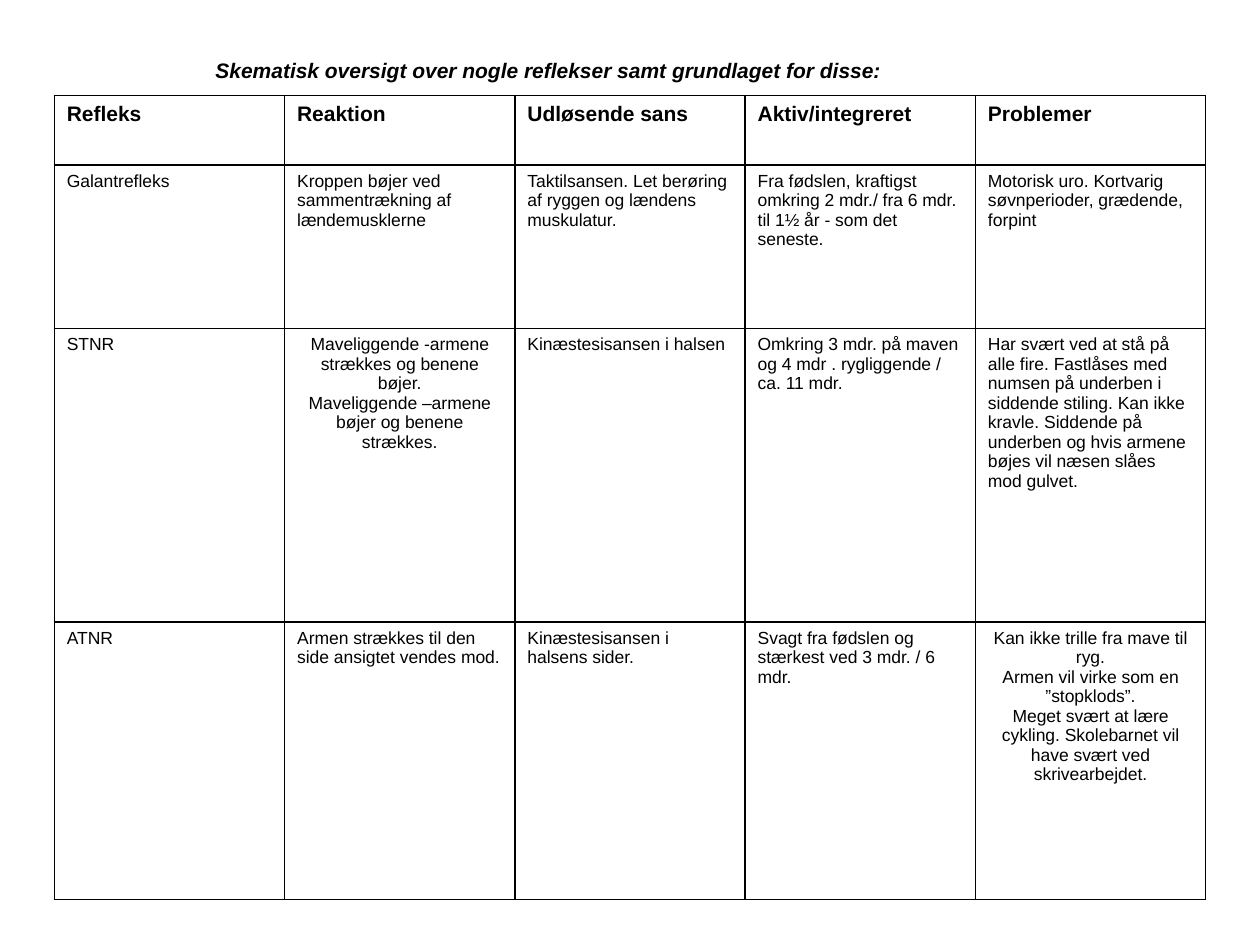
from lxml.etree import SubElement
from pptx import Presentation
from pptx.dml.color import RGBColor
from pptx.enum.text import MSO_ANCHOR, MSO_AUTO_SIZE, PP_ALIGN
from pptx.oxml.ns import qn
from pptx.util import Pt

TITLE = "Skematisk oversigt over nogle reflekser samt grundlaget for disse:"
HEADER = ["Refleks", "Reaktion", "Udløsende sans", "Aktiv/integreret", "Problemer"]
# A list holds the centred paragraphs of one cell.
REFLEXES = [
    ["Galantrefleks",
     "Kroppen bøjer ved sammentrækning af lændemusklerne",
     "Taktilsansen. Let berøring af ryggen og lændens muskulatur.",
     "Fra fødslen, kraftigst omkring 2 mdr./ fra 6 mdr. til 1½ år - som det seneste.",
     "Motorisk uro. Kortvarig søvnperioder, grædende, forpint"],
    ["STNR",
     ["Maveliggende -armene strækkes og benene bøjer.",
      "Maveliggende –armene bøjer og benene strækkes."],
     "Kinæstesisansen i halsen",
     "Omkring 3 mdr. på maven og 4 mdr . rygliggende / ca. 11 mdr.",
     "Har svært ved at stå på alle fire. Fastlåses med numsen på underben i "
     "siddende stiling. Kan ikke kravle. Siddende på underben og hvis armene "
     "bøjes vil næsen slåes mod gulvet."],
    ["ATNR",
     "Armen strækkes til den side ansigtet vendes mod.",
     "Kinæstesisansen i halsens sider.",
     "Svagt fra fødslen og stærkest ved 3 mdr. / 6 mdr.",
     ["Kan ikke trille fra mave til ryg.",
      "Armen vil virke som en ”stopklods”.",
      "Meget svært at lære cykling. Skolebarnet vil have svært ved skrivearbejdet."]],
]
ROW_HEIGHTS = [39.6, 93.4, 167.8, 158.4]
COL_WIDTH = 131.6
BLACK, WHITE = "000000", "FFFFFF"


def color(value):
    return RGBColor.from_string(value)


def format_text(tf, size, bold=False, italic=False, align=PP_ALIGN.LEFT):
    for p in tf.paragraphs:
        p.alignment = align
        for r in p.runs:
            r.font.name = "Arial"
            r.font.size = Pt(size)
            r.font.bold = bold
            r.font.italic = italic
            r.font.color.rgb = color(BLACK)


def add_borders(cell):
    tcPr = cell._tc.get_or_add_tcPr()
    for i, side in enumerate(("a:lnL", "a:lnR", "a:lnT", "a:lnB")):
        ln = tcPr.makeelement(qn(side), {"w": str(Pt(1))})
        fill = SubElement(ln, qn("a:solidFill"))
        SubElement(fill, qn("a:srgbClr"), val=BLACK)
        tcPr.insert(i, ln)  # borders come before the cell fill


prs = Presentation()
prs.slide_width, prs.slide_height = Pt(720), Pt(540)
s = prs.slides.add_slide(prs.slide_layouts[5])

title = s.shapes.title
title.left, title.top, title.width, title.height = Pt(115.9), Pt(29.5), Pt(395.3), Pt(43.2)
tf = title.text_frame
tf.text = TITLE
tf.word_wrap = False
tf.auto_size = MSO_AUTO_SIZE.NONE
tf.vertical_anchor = MSO_ANCHOR.TOP
format_text(tf, 12, bold=True, italic=True)

rows = [HEADER] + REFLEXES
table = s.shapes.add_table(len(rows), len(HEADER), Pt(31), Pt(54.7),
                           Pt(COL_WIDTH * len(HEADER)), Pt(sum(ROW_HEIGHTS))).table
for col in table.columns:
    col.width = Pt(COL_WIDTH)
for i, (row, height) in enumerate(zip(rows, ROW_HEIGHTS)):
    table.rows[i].height = Pt(height)
    for j, content in enumerate(row):
        cell = table.cell(i, j)
        centred = isinstance(content, list)
        cell.text_frame.text = "\n".join(content) if centred else content
        format_text(cell.text_frame, 12 if i == 0 else 10, bold=i == 0,
                    align=PP_ALIGN.CENTER if centred else PP_ALIGN.LEFT)
        cell.fill.solid()
        cell.fill.fore_color.rgb = color(WHITE)
        add_borders(cell)

prs.save("out.pptx")
